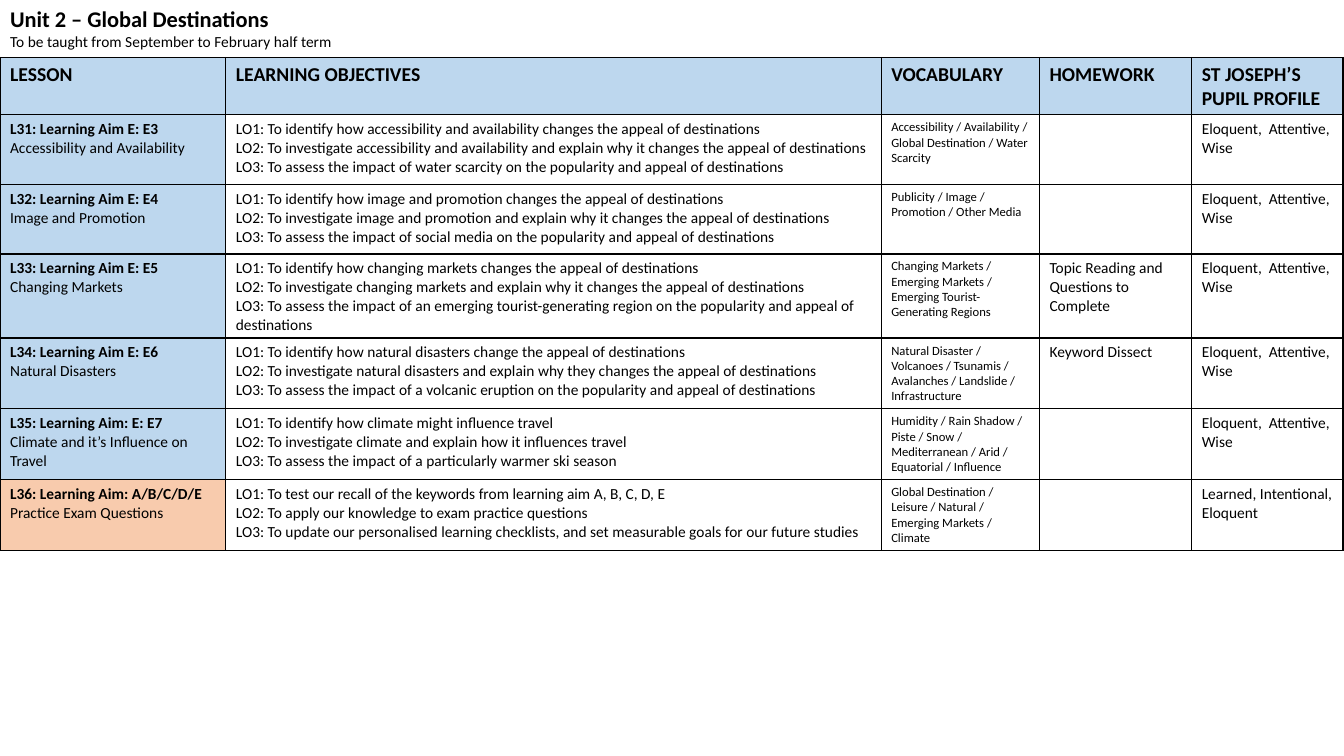
from dataclasses import dataclass

from lxml.etree import SubElement
from pptx import Presentation
from pptx.dml.color import RGBColor
from pptx.enum.text import MSO_ANCHOR, MSO_AUTO_SIZE, PP_ALIGN
from pptx.oxml.ns import qn
from pptx.util import Inches, Pt


@dataclass(frozen=True)
class Theme:
    font: str = "Calibri"
    ink: str = "000000"
    blue: str = "BDD7EE"
    orange: str = "F8CBAD"
    title_size: int = 16
    heading_size: int = 14
    body_size: int = 11
    small_size: int = 9
    border: float = 1


SLIDE_WIDTH, SLIDE_HEIGHT = 13.33, 7.5
TITLE_HEIGHT = 0.57
COLUMN_WIDTHS = [2.24, 6.5, 1.57, 1.51, 1.5]
HEADING_HEIGHT, LESSON_HEIGHT = 0.57, 0.69

HEADINGS = ["LESSON", "LEARNING OBJECTIVES", "VOCABULARY", "HOMEWORK",
            "ST JOSEPH’S PUPIL PROFILE"]
USUAL_PROFILE = "Eloquent,  Attentive, Wise"

# Lesson, topic, objectives, vocabulary, homework, pupil profile
LESSONS = [
    ("L31: Learning Aim E: E3", "Accessibility and Availability",
     ["To identify how accessibility and availability changes the appeal of destinations",
      "To investigate accessibility and availability and explain why it changes "
      "the appeal of destinations",
      "To assess the impact of water scarcity on the popularity and appeal of destinations"],
     "Accessibility / Availability / Global Destination / Water Scarcity",
     "", USUAL_PROFILE),
    ("L32: Learning Aim E: E4", "Image and Promotion",
     ["To identify how image and promotion changes the appeal of destinations",
      "To investigate image and promotion and explain why it changes the appeal of destinations",
      "To assess the impact of social media on the popularity and appeal of destinations"],
     "Publicity / Image / Promotion / Other Media",
     "", USUAL_PROFILE),
    ("L33: Learning Aim E: E5", "Changing Markets",
     ["To identify how changing markets changes the appeal of destinations",
      "To investigate changing markets and explain why it changes the appeal of destinations",
      "To assess the impact of an emerging tourist-generating region on the popularity "
      "and appeal of destinations"],
     "Changing Markets / Emerging Markets / Emerging Tourist-Generating Regions",
     "Topic Reading and Questions to Complete", USUAL_PROFILE),
    ("L34: Learning Aim E: E6", "Natural Disasters",
     ["To identify how natural disasters change the appeal of destinations",
      "To investigate natural disasters and explain why they changes the appeal of destinations",
      "To assess the impact of a volcanic eruption on the popularity and appeal of destinations"],
     "Natural Disaster / Volcanoes / Tsunamis / Avalanches / Landslide / Infrastructure",
     "Keyword Dissect", USUAL_PROFILE),
    ("L35: Learning Aim: E: E7", "Climate and it’s Influence on Travel",
     ["To identify how climate might influence travel",
      "To investigate climate and explain how it influences travel",
      "To assess the impact of a particularly warmer ski season"],
     "Humidity / Rain Shadow / Piste / Snow / Mediterranean / Arid / Equatorial / Influence",
     "", USUAL_PROFILE),
    ("L36: Learning Aim: A/B/C/D/E", "Practice Exam Questions",
     ["To test our recall of the keywords from learning aim A, B, C, D, E",
      "To apply our knowledge to exam practice questions",
      "To update our personalised learning checklists, and set measurable goals "
      "for our future studies"],
     "Global Destination / Leisure / Natural / Emerging Markets / Climate",
     "", "Learned, Intentional, Eloquent"),
]


class UnitSlide:
    def __init__(self, presentation, theme):
        self.theme = theme
        self.slide = presentation.slides.add_slide(presentation.slide_layouts[5])

    def add_lines(self, frame, lines):
        """Add (text, size, bold) lines, one paragraph each."""
        for index, (text, size, bold) in enumerate(lines):
            paragraph = frame.paragraphs[0] if index == 0 else frame.add_paragraph()
            paragraph.alignment = PP_ALIGN.LEFT
            run = paragraph.add_run()
            run.text = text
            run.font.name = self.theme.font
            run.font.size = Pt(size)
            run.font.bold = bold
            run.font.color.rgb = RGBColor.from_string(self.theme.ink)

    def title(self, lines):
        title = self.slide.shapes.title
        title.left, title.top = Inches(0), Inches(0)
        title.width, title.height = Inches(SLIDE_WIDTH), Inches(TITLE_HEIGHT)
        frame = title.text_frame
        frame.word_wrap = True
        frame.auto_size = MSO_AUTO_SIZE.SHAPE_TO_FIT_TEXT
        frame.vertical_anchor = MSO_ANCHOR.TOP
        self.add_lines(frame, lines)

    def table(self, top, widths, heights):
        frame = self.slide.shapes.add_table(
            len(heights), len(widths), Inches(0), Inches(top),
            Inches(sum(widths)), Inches(sum(heights)))
        table = frame.table
        table.first_row = table.horz_banding = False
        for column, width in zip(table.columns, widths):
            column.width = Inches(width)
        for row, height in zip(table.rows, heights):
            row.height = Inches(height)
        return table

    def cell(self, cell, lines, fill=None):
        if fill:
            cell.fill.solid()
            cell.fill.fore_color.rgb = RGBColor.from_string(fill)
        else:
            cell.fill.background()
        self.borders(cell)
        self.add_lines(cell.text_frame, lines)

    def borders(self, cell):
        properties = cell._tc.get_or_add_tcPr()
        for index, side in enumerate(["lnL", "lnR", "lnT", "lnB"]):
            line = SubElement(properties, qn(f"a:{side}"), w=str(Pt(self.theme.border)))
            solid = SubElement(line, qn("a:solidFill"))
            SubElement(solid, qn("a:srgbClr"), val=self.theme.ink)
            properties.insert(index, line)  # borders come before the fill


def main():
    theme = Theme()
    presentation = Presentation()
    presentation.slide_width = Inches(SLIDE_WIDTH)
    presentation.slide_height = Inches(SLIDE_HEIGHT)
    unit = UnitSlide(presentation, theme)

    # Unit title and dates
    unit.title([
        ("Unit 2 – Global Destinations", theme.title_size, True),
        ("To be taught from September to February half term", theme.body_size, False),
    ])

    # Column headings
    plan = unit.table(TITLE_HEIGHT, COLUMN_WIDTHS,
                      [HEADING_HEIGHT] + [LESSON_HEIGHT] * len(LESSONS))
    for column, heading in enumerate(HEADINGS):
        unit.cell(plan.cell(0, column), [(heading, theme.heading_size, True)], theme.blue)

    # Lessons; the closing exam practice stands out in orange
    body = theme.body_size
    for row, lesson in enumerate(LESSONS, start=1):
        name, topic, objectives, vocabulary, homework, profile = lesson
        lesson_fill = theme.orange if row == len(LESSONS) else theme.blue
        unit.cell(plan.cell(row, 0), [(name, body, True), (topic, body, False)], lesson_fill)
        unit.cell(plan.cell(row, 1), [(f"LO{number}: {objective}", body, False)
                                      for number, objective in enumerate(objectives, start=1)])
        unit.cell(plan.cell(row, 2), [(vocabulary, theme.small_size, False)])
        unit.cell(plan.cell(row, 3), [(homework, body, False)] if homework else [])
        unit.cell(plan.cell(row, 4), [(profile, body, False)])

    presentation.save("out.pptx")


if __name__ == "__main__":
    main()
